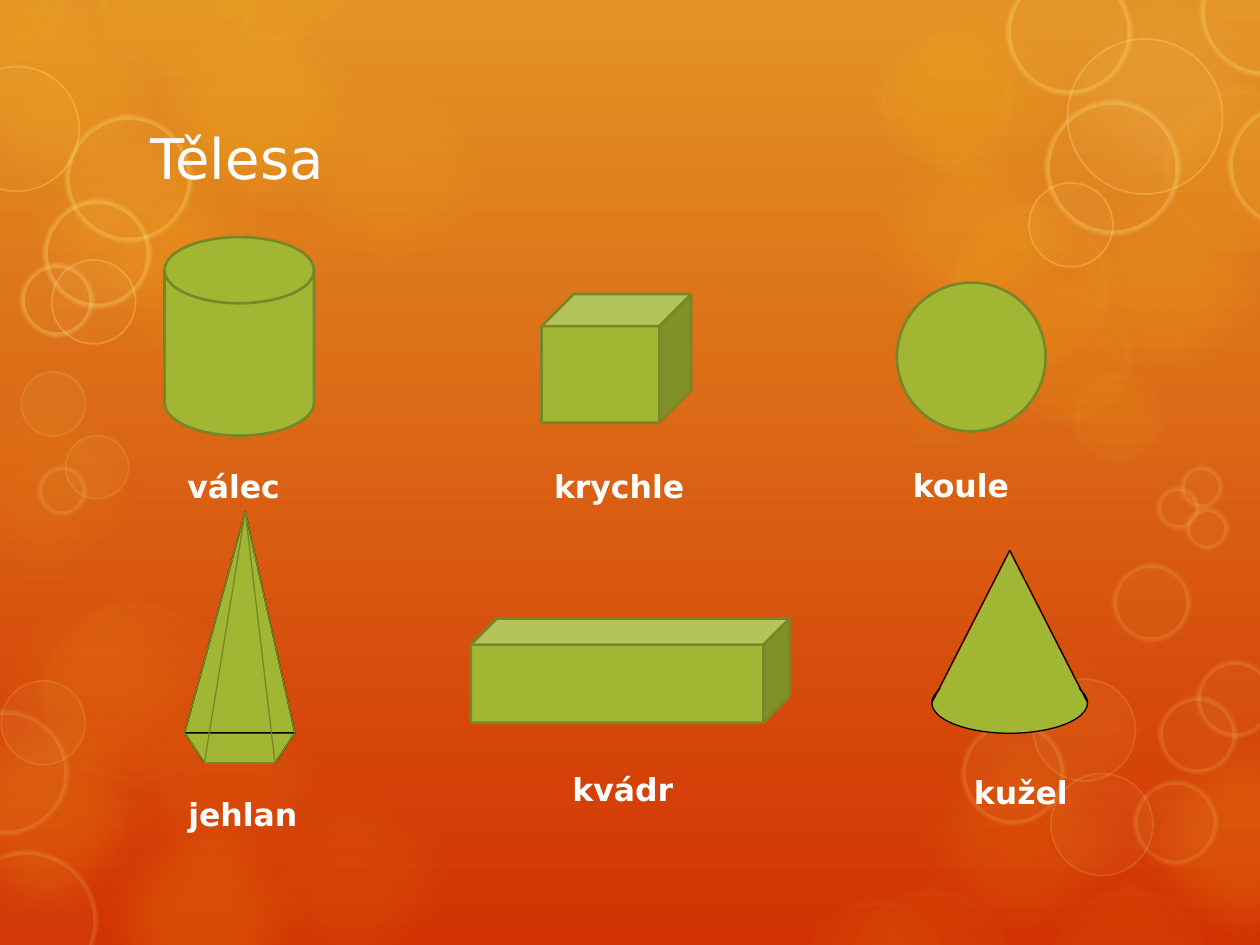
from dataclasses import dataclass

from pptx import Presentation
from pptx.dml.color import RGBColor
from pptx.enum import shapes as kinds, text as txt
from pptx.oxml import ns, xmlchemy as xml
from pptx.util import Pt


@dataclass(frozen=True)
class Theme:
    top: str = "E39325"
    base: str = "D13202"
    glow: str = "FDC61B"
    pale: str = "FFE281"
    haze: str = "FEEBAE"
    body: str = "A1B633"
    edge: str = "778726"
    ink: str = "000000"
    text: str = "FFFFFF"
    font: str = "DejaVu Sans"
    head: int = 32
    label: int = 18
    thin: float = 0.75
    thick: float = 1.5


T = Theme()
KIND = kinds.MSO_SHAPE
BLOB = 150.5

BLOBS = {
    5: [(525, 343.5)],
    8: [(-18, 318), (55.5, 377), (125, 429), (-50, 203)],
    10: [(41, 86.5), (147.5, 22.5), (481.5, -21), (508.5, 404.5)],
    14: [(-40.5, -23)],
    15: [(0, 52), (590.5, 86.5), (481.5, 62)],
    16: [(41, 451.5), (634.5, 404.5), (-49.5, 389.5)],
    20: [(72.5, -13)],
}
HAZES = {
    (10, 6): [(661, 47, 98.5), (499.5, 16.5, 82), (541.5, 114.5, 96),
              (568, 161.5, 82), (610, 209.5, 57), (54, -47, 94),
              (118, -54, 82), (-41, -42, 82)],
    (6, 4): [(21.5, 340.5, 110), (455.5, 511, 89), (482.5, 504.5, 98),
             (597, 504.5, 96)],
}
RINGS = {
    (1, 15): [(0.7, 389, 48), (600.5, 442, 58.3), (590.5, 388, 58.3),
              (12.2, 212.5, 36.7), (37.5, 249, 36)],
    (5, 15): [(-25, 486, 80.5), (-31.5, 406, 70.5), (549.5, 412.5, 58.3),
              (648, 446.5, 47.5), (636, 322.5, 44), (662.5, 398, 44),
              (684, 377.5, 44), (674.5, 266.5, 24), (661, 278.5, 24),
              (677.5, 290, 24), (21.5, 266.5, 28)],
    (1, 30): [(-26, 38, 71.3), (29.5, 148.5, 48), (610, 22.3, 88.6),
              (588, 104.5, 48)],
    (5, 30): [(37.5, 66, 72), (25, 114.5, 61), (12, 151, 41),
              (575.5, -17, 71), (686, -29, 72), (702, 59, 71.3),
              (597.5, 57.5, 76.3)],
}


def rgb(code):
    return RGBColor.from_string(code)


def paint(shape, fill, line=None, width=T.thin):
    shape.shadow.inherit = False
    shape.fill.solid()
    shape.fill.fore_color.rgb = rgb(fill)
    if line:
        shape.line.color.rgb = rgb(line)
        shape.line.width = Pt(width)
    else:
        shape.line.fill.background()
    return shape


def solid(host, kind, box, line=T.edge, width=T.thick):
    shape = host.add_shape(kind, *map(Pt, box))
    return paint(shape, T.body, line, width)


def poly(host, spots):
    spots = [(Pt(x), Pt(y)) for x, y in spots]
    form = host.build_freeform(*spots[0], scale=1.0)
    form.add_line_segments(spots[1:], close=True)
    return form.convert_to_shape()


def stroke(host, start, end, color):
    line = host.add_connector(kinds.MSO_CONNECTOR.STRAIGHT,
                              *map(Pt, start + end))
    line.line.color.rgb = rgb(color)
    line.line.width = Pt(T.thin)
    line._element.spPr.append(xml.OxmlElement("a:effectLst"))


def fade(node, share):
    for color in node.iter(ns.qn("a:srgbClr")):
        alpha = xml.OxmlElement("a:alpha")
        alpha.set("val", str(share * 1000))
        color.append(alpha)


def disc(host, box, fill, share, line=None, width=0, rim=0, soft=0):
    x, y, size = box
    shape = host.add_shape(KIND.OVAL, *map(Pt, (x, y, size, size)))
    paint(shape, fill, line, width)
    props = shape._element.spPr
    fade(props.find(ns.qn("a:solidFill")), share)
    fade(props.find(ns.qn("a:ln")), rim)
    if soft:
        blur = xml.OxmlElement("a:softEdge")
        blur.set("rad", str(Pt(soft)))
        props.find(ns.qn("a:effectLst")).append(blur)
    return shape


def lights(slide):
    layout = slide.slide_layout
    fill = layout.background.fill
    fill.gradient()
    fill.gradient_angle = 270
    for stop, color in zip(fill.gradient_stops, (T.top, T.base)):
        stop.color.rgb = rgb(color)
    host = slide.shapes
    discs = [disc(host, (*spot, BLOB), T.glow, share, soft=25)
             for share, spots in BLOBS.items() for spot in spots]
    discs.append(disc(host, (590.5, -23, BLOB), T.pale, 10, soft=25))
    discs.append(disc(host, (486, 188.5, 96), T.glow, 10, soft=25))
    discs += [disc(host, spot, T.glow, share, T.haze, 14, rim, 10)
              for (share, rim), spots in HAZES.items() for spot in spots]
    discs += [disc(host, spot, T.pale, 5, T.pale, width, rim, width // 2)
              for (width, rim), spots in RINGS.items() for spot in spots]
    for mark, shape in enumerate(discs, 100):
        node = shape._element
        node.nvSpPr.cNvPr.set("id", str(mark))
        layout.shapes._spTree.append(node)


def write(shape, words, size, bold):
    para = shape.text_frame.paragraphs[0]
    para.text = words
    para.alignment = txt.PP_ALIGN.LEFT
    para.font.name, para.font.size = T.font, Pt(size)
    para.font.bold, para.font.color.rgb = bold, rgb(T.text)


def title(slide, box, words):
    shape = slide.shapes.title
    shape.left, shape.top, shape.width, shape.height = map(Pt, box)
    shape.text_frame.vertical_anchor = txt.MSO_ANCHOR.MIDDLE
    write(shape, words, T.head, False)


def label(slide, box, words):
    shape = slide.shapes.add_textbox(*map(Pt, box))
    shape.text_frame.word_wrap = True
    shape.text_frame.auto_size = txt.MSO_AUTO_SIZE.SHAPE_TO_FIT_TEXT
    write(shape, words, T.label, True)


def cone(slide, box):
    x, y, w, h = box
    host = slide.shapes.add_group_shape().shapes
    disk = h / 3
    rim = y + h - disk / 2
    tip = (x + w / 2, y)
    solid(host, KIND.OVAL, (x, y + h - disk, w, disk), T.ink, T.thin)
    stroke(host, (x, rim), tip, T.ink)
    stroke(host, tip, (x + w, rim), T.ink)
    solid(host, KIND.ISOSCELES_TRIANGLE,
          (x + 4, y + 1.5, w - 8, h * 0.76), None)


def spire(slide, box):
    x, y, w, h = box
    host = slide.shapes.add_group_shape().shapes
    rim, low = y + h * 0.88, y + h
    tip = (x + w * 0.55, y)
    base = [(x, rim), (x + w * 0.18, low), (x + w * 0.82, low), (x + w, rim)]
    side = solid(host, KIND.ISOSCELES_TRIANGLE, (x, y, w, rim - y),
                 T.ink, T.thin)
    side.adjustments[0] = 0.55
    paint(poly(host, base), T.body, T.ink)
    for spot in base:
        stroke(host, spot, tip, T.edge)
    for start, end in zip(base, base[1:]):
        stroke(host, start, end, T.edge)


def main():
    deck = Presentation()
    deck.slide_width, deck.slide_height = Pt(720), Pt(540)
    slide = deck.slides.add_slide(deck.slide_layouts[5])
    lights(slide)
    title(slide, (79, 53.5, 561, 72.5), "Tělesa")
    for kind, box in [
        (KIND.FLOWCHART_MAGNETIC_DISK, (94, 135.5, 85.5, 113.5)),
        (KIND.CUBE, (309.5, 168, 85.5, 73.5)),
        (KIND.CUBE, (269, 353.5, 182, 59.5)),
        (KIND.FLOWCHART_CONNECTOR, (512.5, 161.5, 85, 85)),
    ]:
        solid(slide.shapes, kind, box)
    cone(slide, (532.5, 314.5, 89, 104.5))
    spire(slide, (105.5, 292.5, 63, 143.5))
    for words, x, y, w in [
        ("válec", 100, 263.5, 96), ("krychle", 309.5, 263.5, 96),
        ("koule", 514.5, 263, 109.5), ("jehlan", 100.5, 451, 96),
        ("kvádr", 320, 436.5, 113), ("kužel", 549.5, 438, 88.5),
    ]:
        label(slide, (x, y, w, 29), words)
    deck.save("out.pptx")


if __name__ == "__main__":
    main()
